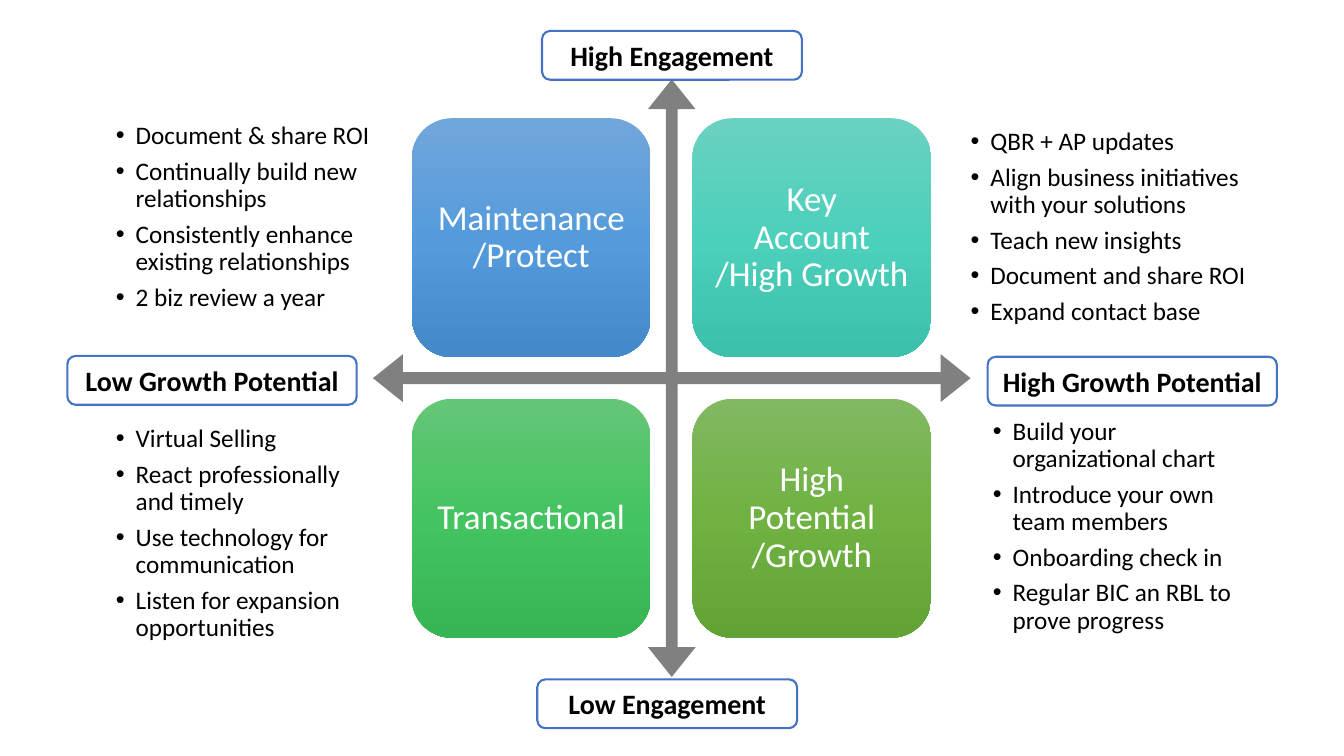
from copy import deepcopy
from pptx import Presentation
from pptx import util as u
from pptx.dml import color
from pptx.enum import shapes, text
from pptx.oxml import ns
from lxml import etree

Cm, Pt = u.Cm, u.Pt
hue = color.RGBColor.from_string


def put(item, vals):
    for key, val in vals.items():
        setattr(item, key, val)


def style(para, size, tint, bold=False):
    for run in para.runs:
        put(run.font, {"name": "Calibri", "size": Pt(size), "bold": bold})
        run.font.color.rgb = hue(tint)


deck = Presentation()
put(deck, {"slide_width": Cm(33.87), "slide_height": Cm(19.05)})
slide = deck.slides.add_slide(deck.slide_layouts[4])
title = slide.shapes.title._element
title.getparent().remove(title)

lists = [
    ((2.36, 2.01, 7.67, 6.93), [
        "Document & share ROI",
        "Continually build new relationships",
        "Consistently enhance existing relationships",
        "2 biz review a year"]),
    ((23.9, 2.24, 8.51, 6.98), [
        "QBR + AP updates",
        "Align business initiatives with your solutions",
        "Teach new insights",
        "Document and share ROI",
        "Expand contact base"]),
    ((2.36, 10.44, 7.85, 6.02), [
        "Virtual Selling",
        "React professionally and timely",
        "Use technology for communication",
        "Listen for expansion opportunities"]),
    ((24.46, 10.26, 7.59, 6.02), [
        "Build your organizational chart",
        "Introduce your own team members",
        "Onboarding check in",
        "Regular BIC an RBL to prove progress"]),
]
inset = {"margin_left": Cm(0.56), "margin_right": Cm(0.56),
         "margin_top": Cm(0.56), "margin_bottom": Cm(0.56)}
middle = {"word_wrap": True, "auto_size": text.MSO_AUTO_SIZE.NONE,
          "vertical_anchor": text.MSO_ANCHOR.MIDDLE}

for body, (box, lines) in zip(slide.placeholders, lists):
    put(body, dict(zip(("left", "top", "width", "height"), map(Cm, box))))
    frame = body.text_frame
    put(frame, inset | middle)
    frame.text = "\n".join(lines)
    for row, para in enumerate(frame.paragraphs):
        props = para._p.get_or_add_pPr()
        props.set("marL", str(Cm(0.5)))
        props.set("indent", str(-Cm(0.5)))
        etree.SubElement(props, ns.qn("a:buFont")).set("typeface", "Arial")
        etree.SubElement(props, ns.qn("a:buChar")).set("char", "•")
        put(para, {"line_spacing": 0.9, "space_after": Pt(0),
                   "space_before": Pt(6 if row else 0),
                   "alignment": text.PP_ALIGN.LEFT})
        style(para, 18, "000000")

cross = slide.shapes.add_shape(
    shapes.MSO_SHAPE.QUAD_ARROW, Cm(9.4), Cm(2), Cm(15.06), Cm(15.06))
cross.shadow.inherit = False
cross.fill.solid()
cross.fill.fore_color.rgb = hue("808080")
cross.line.fill.background()
for spot, ratio in enumerate((0.02, 0.04, 0.05)):
    cross.adjustments[spot] = ratio

tiles = [
    ("Maintenance/Protect", ("71A6DB", "559BDB", "448ACA")),
    ("Key\vAccount /High Growth", ("6AD1C0", "4CD0BC", "3CC0AC")),
    ("Transactional", ("64C677", "44C460", "36B552")),
    ("High\vPotential /Growth", ("81B861", "6FB242", "62A336")),
]
for spot, (words, tints) in enumerate(tiles):
    row, col = divmod(spot, 2)
    tile = slide.shapes.add_shape(
        shapes.MSO_SHAPE.ROUNDED_RECTANGLE, Cm(10.38 + 7.07 * col),
        Cm(2.98 + 7.07 * row), Cm(6.02), Cm(6.02))
    tile.shadow.inherit = False
    tile.line.fill.background()
    tile.fill.gradient()
    tile.fill.gradient_angle = 270
    stops = tile._element.spPr.find(".//" + ns.qn("a:gsLst"))
    stops.insert(1, deepcopy(stops[0]))
    for stop, tint, place in zip(tile.fill.gradient_stops, tints, (0, 0.5, 1)):
        stop.color.rgb = hue(tint)
        stop.position = place
    frame = tile.text_frame
    put(frame, middle | {"margin_left": Cm(0.26), "margin_right": Cm(0.26)})
    frame.text = words
    para = frame.paragraphs[0]
    put(para, {"alignment": text.PP_ALIGN.CENTER, "line_spacing": 0.9})
    style(para, 25, "FFFFFF")

labels = [
    ("High Engagement", 13.66, 0.78, 6.55),
    ("Low Engagement", 13.54, 17.12, 6.55),
    ("Low Growth Potential", 1.7, 8.97, 7.29),
    ("High Growth Potential", 24.89, 8.99, 7.29),
]
for words, left, top, width in labels:
    label = slide.shapes.add_shape(
        shapes.MSO_SHAPE.ROUNDED_RECTANGLE, Cm(left), Cm(top), Cm(width), Cm(1.23))
    label.shadow.inherit = False
    label.fill.background()
    label.line.color.rgb = hue("4472C4")
    label.line.width = Pt(1.5)
    frame = label.text_frame
    put(frame, middle | {"word_wrap": False})
    frame.text = words
    para = frame.paragraphs[0]
    para.alignment = text.PP_ALIGN.CENTER
    style(para, 20, "000000", True)

deck.save("out.pptx")
